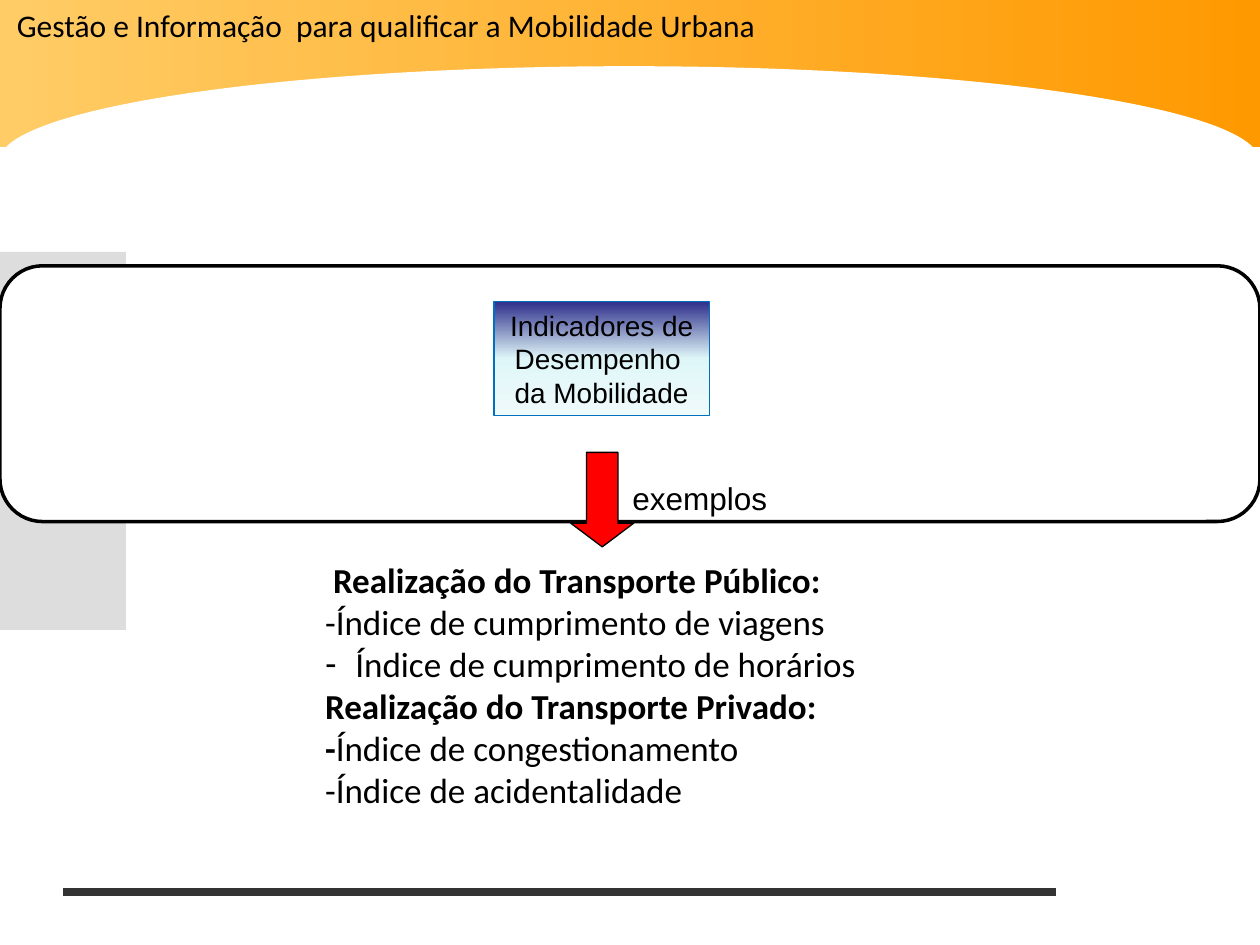
from dataclasses import dataclass
from typing import NamedTuple, Optional

from lxml.etree import SubElement
from pptx import Presentation
from pptx.dml.color import RGBColor
from pptx.enum.shapes import MSO_CONNECTOR as Conn, MSO_SHAPE as Shp
from pptx.enum.text import MSO_ANCHOR as Anchor, MSO_AUTO_SIZE as Auto, PP_ALIGN as Align
from pptx.oxml.ns import qn
from pptx.util import Inches, Pt


@dataclass(frozen=True)
class Theme:
    black: str = "000000"
    white: str = "FFFFFF"
    grey: str = "DDDDDD"
    rule: str = "333333"
    red: str = "FF0000"
    blue: str = "0070C0"
    band: tuple = ((0, "FFCC66"), (100, "FF9900"))
    box: tuple = ((0, "2D2D8A"), (50, "DFF6F8"), (100, "EFFAFB"))
    sans: str = "Arial"
    body: str = "Calibri"
    box_size: int = 16
    label_size: int = 18
    list_size: int = 20


class Run(NamedTuple):
    text: str
    bold: bool = False


class Para(NamedTuple):
    runs: tuple
    bullet: Optional[str] = None


class Block(NamedTuple):
    kind: Shp
    at: tuple
    fill: object  # a colour, or (position, colour) stops
    line: Optional[str] = None
    width: float = 0.75
    adj: tuple = ()
    angle: float = 0  # gradient direction, counter-clockwise
    rotation: float = 0


T = Theme()
HANGING = 0.24


def rgb(value: str) -> RGBColor:
    return RGBColor.from_string(value)


def paint(sp, fill, line: Optional[str] = None, width: float = 0.75, angle: float = 0) -> None:
    sp.shadow.inherit = False
    if isinstance(fill, str):
        sp.fill.solid()
        sp.fill.fore_color.rgb = rgb(fill)
    else:
        sp.fill.gradient()
        sp.fill.gradient_angle = angle
        stops = sp._element.spPr.find(".//" + qn("a:gsLst"))
        for old in list(stops):
            stops.remove(old)
        for pos, color in fill:
            gs = SubElement(stops, qn("a:gs"), pos=str(pos * 1000))
            SubElement(gs, qn("a:srgbClr"), val=color)
    if line:
        sp.line.color.rgb = rgb(line)
        sp.line.width = Pt(width)
    else:
        sp.line.fill.background()


def draw_block(slide, b: Block):
    sp = slide.shapes.add_shape(b.kind, *map(Inches, b.at))
    sp.rotation = b.rotation
    for i, value in enumerate(b.adj):
        sp.adjustments[i] = value
    paint(sp, b.fill, b.line, b.width, b.angle)
    return sp


def draw_curve(slide, start: tuple, curves: tuple, fill: str, steps: int = 30) -> None:
    """Outline of joined cubic curves, closed with a straight side."""
    points, p0 = [], start
    for p1, p2, p3 in curves:
        for n in range(1, steps + 1):
            t = n / steps
            u = 1 - t
            points.append(tuple(
                u**3 * a + 3 * u * u * t * b + 3 * u * t * t * c + t**3 * d
                for a, b, c, d in zip(p0, p1, p2, p3)))
        p0 = p3
    fb = slide.shapes.build_freeform(*start, scale=Inches(1))
    fb.add_line_segments(points, close=True)
    paint(fb.convert_to_shape(), fill)


def write(sp, paras: tuple, font: str, size: int, align=Align.LEFT,
          anchor=Anchor.TOP, wrap: bool = True) -> None:
    tf = sp.text_frame
    tf.auto_size = Auto.NONE
    tf.word_wrap = wrap
    tf.vertical_anchor = anchor
    for i, para in enumerate(paras):
        p = tf.paragraphs[0] if i == 0 else tf.add_paragraph()
        p.alignment = align
        p.space_before = Pt(0)
        pPr = p._p.get_or_add_pPr()
        indent = Inches(HANGING) if para.bullet else 0
        pPr.set("marL", str(indent))
        pPr.set("indent", str(-indent))
        if para.bullet:
            SubElement(pPr, qn("a:buChar"), char=para.bullet)
        else:
            SubElement(pPr, qn("a:buNone"))
        for run in para.runs:
            r = p.add_run()
            r.text = run.text
            r.font.name, r.font.size, r.font.bold = font, Pt(size), run.bold
            r.font.color.rgb = rgb(T.black)


def lines(*texts: str) -> tuple:
    return tuple(Para((Run(text),)) for text in texts)


def place_on_top(slide, ph, at: tuple):
    ph.left, ph.top, ph.width, ph.height = map(Inches, at)
    slide.shapes._spTree.append(ph._element)
    return ph


INDICATORS = (
    Para((Run(" "), Run("Realização do Transporte Público:", True))),
    Para((Run("-Índice de cumprimento de viagens"),)),
    Para((Run("Índice de cumprimento de horários"),), "-"),
    Para((Run("Realização do Transporte Privado:", True),)),
    Para((Run("-", True), Run("Índice de congestionamento"))),
    Para((Run("-Índice de acidentalidade"),)),
)


def main() -> None:
    prs = Presentation()
    prs.slide_width, prs.slide_height = Inches(10), Inches(7.5)
    slide = prs.slides.add_slide(prs.slide_layouts[1])

    # Background: orange band cut by a white arc, grey side curve
    draw_block(slide, Block(Shp.RECTANGLE, (0, 0, 10, 1.17), T.band))
    draw_block(slide, Block(Shp.MOON, (4.62, -4.1, 0.75, 10), T.white,
                            adj=(0.875,), rotation=90))
    draw_curve(slide, (0, 1.15), (((0.41, 1.4), (0.83, 1.66), (0.83, 2.72)),
                                  ((0.83, 3.77), (0.41, 5.64), (0, 7.5))), T.grey)

    # Frame, indicator box and arrow
    draw_block(slide, Block(Shp.ROUNDED_RECTANGLE, (0, 2.11, 10, 2.03), T.white, T.black, 2))
    box = draw_block(slide, Block(Shp.RECTANGLE, (3.92, 2.39, 1.71, 0.91), T.box,
                                  T.blue, angle=270))
    write(box, lines("Indicadores de", "Desempenho ", "da Mobilidade"),
          T.sans, T.box_size, Align.CENTER, Anchor.MIDDLE)
    draw_block(slide, Block(Shp.DOWN_ARROW, (4.53, 3.59, 0.5, 0.75), T.red, T.black,
                            adj=(0.5, 0.375)))

    # List of indicators
    body = place_on_top(slide, slide.placeholders[1], (2.48, 4.38, 4.86, 2.46))
    write(body, INDICATORS, T.body, T.list_size)

    # Footer rule
    rule = slide.shapes.add_connector(Conn.STRAIGHT, Inches(0.5), Inches(7.08),
                                      Inches(8.38), Inches(7.08))
    rule.line.color.rgb = rgb(T.rule)
    rule.line.width = Pt(4.5)
    SubElement(rule._element.spPr, qn("a:effectLst"))

    # Title and arrow label
    title = place_on_top(slide, slide.shapes.title, (0, 0, 6.13, 0.4))
    write(title, lines("Gestão e Informação  para qualificar a Mobilidade Urbana"),
          T.body, T.label_size, Align.CENTER, wrap=False)
    label = slide.shapes.add_textbox(*map(Inches, (4.92, 3.75, 1.28, 0.4)))
    write(label, lines("exemplos"), T.sans, T.label_size, wrap=False)

    prs.save("out.pptx")


if __name__ == "__main__":
    main()
